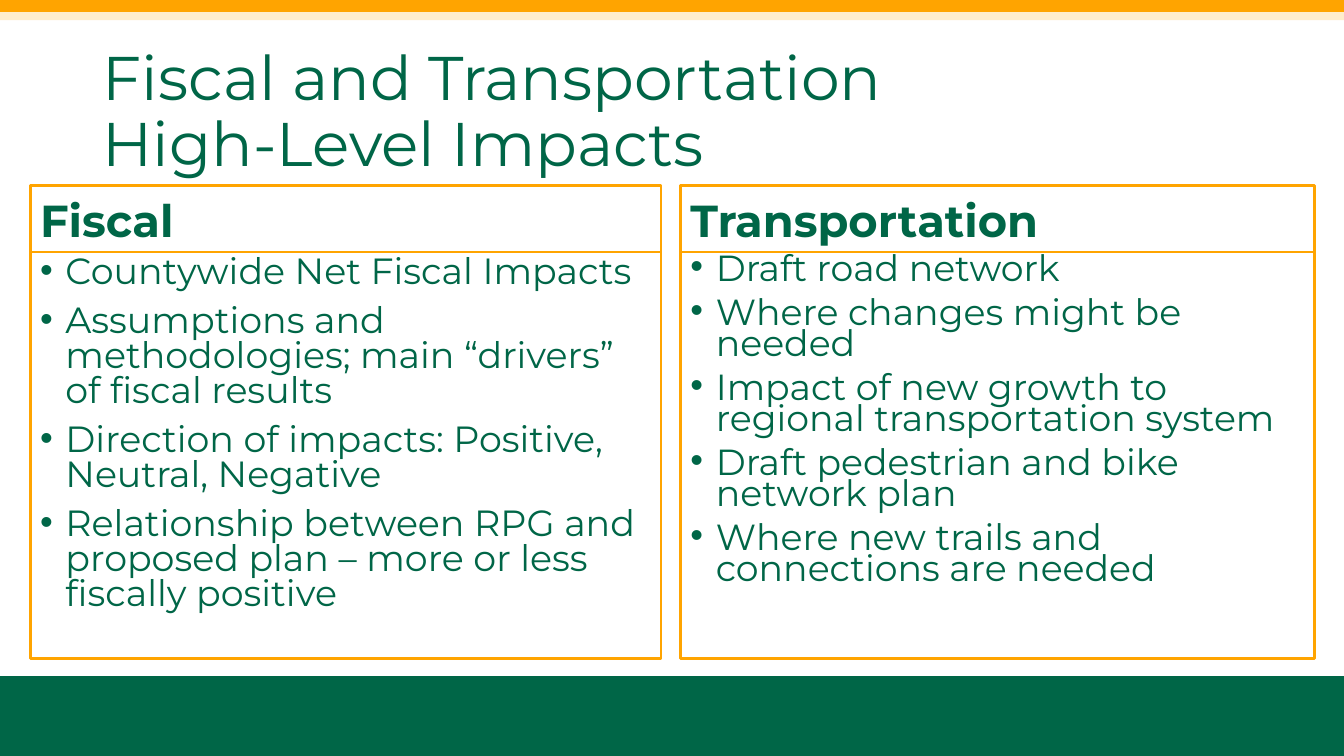
import pptx
import pptx.dml.color
import pptx.enum.shapes
import pptx.enum.text
import pptx.oxml.ns
import pptx.util
from lxml import etree

Cm = pptx.util.Cm
Pt = pptx.util.Pt
RGBColor = pptx.dml.color.RGBColor
Anchor = pptx.enum.text.MSO_ANCHOR

GREEN = RGBColor(0x00, 0x66, 0x47)
GOLD = RGBColor(0xFF, 0xA4, 0x00)
CREAM = RGBColor(0xFF, 0xED, 0xCC)

WIDTH, HEIGHT = 33.87, 19.05
HEADING_TOP, BODY_TOP, BODY_BOTTOM = 4.67, 6.35, 16.59

TITLE = ["Fiscal and Transportation \vHigh-Level Impacts"]
COLUMNS = [
    (0.76, 15.9, "Fiscal", 26, 0.8, [
        "Countywide Net Fiscal Impacts",
        "Assumptions and methodologies; main “drivers” of fiscal results",
        "Direction of impacts: Positive, Neutral, Negative",
        "Relationship between RPG and proposed plan – more or less fiscally positive",
    ]),
    (17.15, 15.98, "Transportation", 25.9, 0.7, [
        "Draft road network",
        "Where changes might be needed",
        "Impact of new growth to regional transportation system",
        "Draft pedestrian and bike network plan",
        "Where new trails and connections are needed",
    ]),
]


class SlideBuilder:
    font = "Montserrat"
    text_color = GREEN
    border_color = GOLD

    def __init__(self, page):
        self.page = page

    def band(self, top, height, color):
        shape = self.page.shapes.add_shape(
            pptx.enum.shapes.MSO_SHAPE.RECTANGLE, 0, Cm(top), Cm(WIDTH), Cm(height))
        shape.shadow.inherit = False
        shape.fill.solid()
        shape.fill.fore_color.rgb = color
        shape.line.fill.background()

    def text(self, paragraphs, left, top, width, height, size, spacing=0.9,
             anchor=Anchor.TOP, bold=False, border=True, bullets=False):
        box = self.page.shapes.add_textbox(Cm(left), Cm(top), Cm(width), Cm(height))
        if border:
            box.line.color.rgb = self.border_color
            box.line.width = Pt(2)
        frame = box.text_frame
        frame.word_wrap = True
        frame.vertical_anchor = anchor
        for index, words in enumerate(paragraphs):
            para = frame.add_paragraph() if index else frame.paragraphs[0]
            para.text = words
            if bullets:
                self.bullet(para)
            para.line_spacing = spacing
            para.space_before = Pt(10 if index else 0)
            for span in para.runs:
                span.font.name = self.font
                span.font.size = Pt(size)
                span.font.bold = bold
                span.font.color.rgb = self.text_color

    def bullet(self, para):
        properties = para._p.get_or_add_pPr()
        indent = Cm(0.64)
        properties.set("marL", str(indent))
        properties.set("indent", str(-indent))
        font = etree.SubElement(properties, pptx.oxml.ns.qn("a:buFont"))
        font.set("typeface", "Arial")
        mark = etree.SubElement(properties, pptx.oxml.ns.qn("a:buChar"))
        mark.set("char", "•")


def main():
    deck = pptx.Presentation()
    deck.slide_width, deck.slide_height = Cm(WIDTH), Cm(HEIGHT)
    builder = SlideBuilder(deck.slides.add_slide(deck.slide_layouts[6]))

    builder.band(0, 0.51, CREAM)
    builder.band(17.04, HEIGHT - 17.04, GREEN)
    builder.band(0, 0.3, GOLD)
    builder.text(TITLE, 2.34, 1.02, 29.21, 3.68, 44,
                 anchor=Anchor.MIDDLE, border=False)

    for left, width, heading, size, spacing, points in COLUMNS:
        builder.text([heading], left, HEADING_TOP, width, BODY_TOP - HEADING_TOP, 32,
                     anchor=Anchor.BOTTOM, bold=True)
        builder.text(points, left, BODY_TOP, width, BODY_BOTTOM - BODY_TOP, size,
                     spacing=spacing, bullets=True)

    deck.save("out.pptx")


if __name__ == "__main__":
    main()
